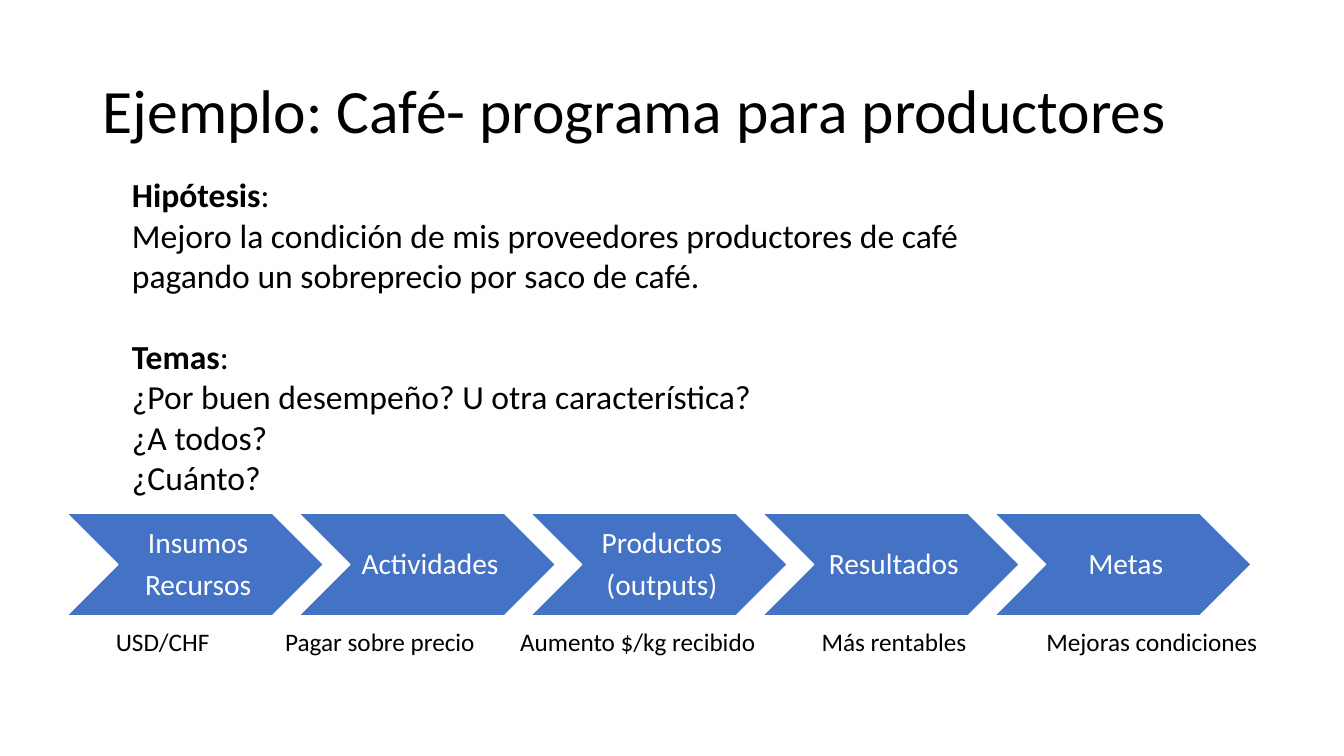
from dataclasses import dataclass

from lxml import etree
from pptx import Presentation
from pptx.dml.color import RGBColor
from pptx.enum.shapes import MSO_SHAPE
from pptx.enum.text import MSO_ANCHOR, PP_ALIGN
from pptx.oxml.ns import qn
from pptx.util import Inches, Pt

CHEVRON = MSO_SHAPE.CHEVRON
MIDDLE = MSO_ANCHOR.MIDDLE
LEFT, CENTER = PP_ALIGN.LEFT, PP_ALIGN.CENTER


@dataclass(frozen=True)
class Theme:
    """Colours and type sizes of the slide."""
    font: str = "Calibri"
    ink: RGBColor = RGBColor(0, 0, 0)
    paper: RGBColor = RGBColor(255, 255, 255)
    step: RGBColor = RGBColor(0x44, 0x72, 0xC4)
    title: float = 44
    body: float = 24
    label: float = 21
    note: float = 18


THEME = Theme()
WIDE, HIGH = 13.33, 7.5
PITCH, STEP = 2.3, 2.55
TITLE = "Ejemplo: Café- programa para productores"
BODY = [
    ("Hipótesis", [
        "Mejoro la condición de mis proveedores productores de café "
        "pagando un sobreprecio por saco de café."]),
    ("Temas", [
        "¿Por buen desempeño? U otra característica?",
        "¿A todos?",
        "¿Cuánto?"]),
]
STEPS = ["Insumos\nRecursos", "Actividades", "Productos\n(outputs)",
         "Resultados", "Metas"]
NOTES = {"USD/CHF": 0, "Pagar sobre precio": 1.68,
         "Aumento $/kg recibido": 4.01, "Más rentables": 7,
         "Mejoras condiciones": 9.23}


def place(box):
    """Turn a box in inches into lengths."""
    return [Inches(side) for side in box]


def style(par, size, color):
    """Format every run of a paragraph."""
    for run in par.runs:
        run.font.name = THEME.font
        run.font.size = Pt(size)
        run.font.color.rgb = color


def head(slide, box):
    """Fill and place the title."""
    title = slide.shapes.title
    title.left, title.top, title.width, title.height = place(box)
    frame = title.text_frame
    frame.text = TITLE
    frame.vertical_anchor = MIDDLE
    par = frame.paragraphs[0]
    par.alignment = LEFT
    par.line_spacing = 0.9
    style(par, THEME.title, THEME.ink)


def body(slide, box):
    """Write the topics, each under a bold heading."""
    frame = slide.shapes.add_textbox(*place(box)).text_frame
    frame.word_wrap = True
    frame.text = "\n".join(
        "\n".join([name + ":"] + lines) for name, lines in BODY)
    pars = iter(frame.paragraphs)
    for index, (name, lines) in enumerate(BODY):
        par = next(pars)
        par.text = name
        par.runs[0].font.bold = True
        par.add_run().text = ":"
        if index:
            par.space_before = Pt(29)
        for _ in lines:
            next(pars)
    for par in frame.paragraphs:
        style(par, THEME.body, THEME.ink)


def chain(slide, box):
    """Draw the row of chevrons at an even pitch."""
    left, top, _, height = box
    for index, name in enumerate(STEPS):
        spot = (left + index * PITCH, top, STEP, height)
        shape = slide.shapes.add_shape(CHEVRON, *place(spot))
        shape.shadow.inherit = False
        shape.fill.solid()
        shape.fill.fore_color.rgb = THEME.step
        shape.line.color.rgb = THEME.paper
        shape.line.width = Pt(1)
        frame = shape.text_frame
        frame.text = name
        frame.word_wrap = True
        frame.vertical_anchor = MIDDLE
        frame.margin_left = Inches(0.09)
        frame.margin_right = Inches(0.03)
        frame.margin_top = frame.margin_bottom = Inches(0.03)
        for par in frame.paragraphs:
            par.alignment = CENTER
            par.line_spacing = 0.9
            par.space_after = Pt(7.35)
            style(par, THEME.label, THEME.paper)


def notes(slide, box):
    """Write the notes below the chain at tab stops."""
    frame = slide.shapes.add_textbox(*place(box)).text_frame
    frame.word_wrap = True
    frame.text = "\t".join(NOTES)
    par = frame.paragraphs[0]
    tabs = etree.SubElement(par._p.get_or_add_pPr(), qn("a:tabLst"))
    for stop in list(NOTES.values())[1:]:
        etree.SubElement(tabs, qn("a:tab"), pos=str(Inches(stop)), algn="l")
    style(par, THEME.note, THEME.ink)


def main():
    """Build and save the slide."""
    deck = Presentation()
    deck.slide_width, deck.slide_height = Inches(WIDE), Inches(HIGH)
    slide = deck.slides.add_slide(deck.slide_layouts[5])
    chain(slide, (0.66, 5.09, 4 * PITCH + STEP, 1.02))
    head(slide, (0.92, 0.4, 11.5, 1.45))
    body(slide, (1.21, 1.68, 9.55, 4.14))
    notes(slide, (1.05, 6.16, 11.62, 0.4))
    deck.save("out.pptx")


if __name__ == "__main__":
    main()
